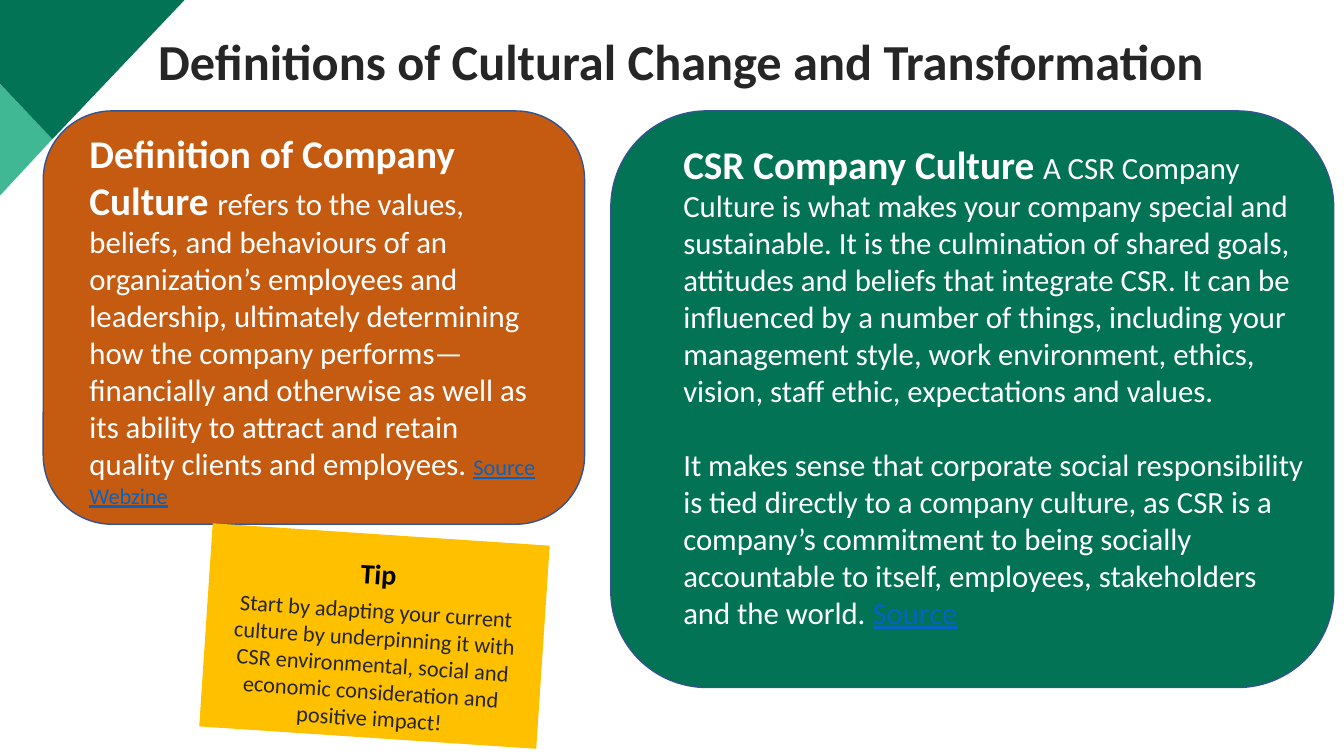
from pptx import Presentation
from pptx import util as u
from pptx.dml.color import RGBColor
from pptx.enum import shapes, text

GREEN, MINT, ORANGE, YELLOW = "027354", "40B894", "C55A11", "FFC000"
WHITE, BLACK, INK, LINK, OUTLINE = "FFFFFF", "000000", "262626", "0563C1", "325491"

HEADING = {"size": u.Pt(28), "bold": True, "color": WHITE}
BODY = {"size": u.Pt(22), "color": WHITE}
SOURCE = {"size": u.Pt(22), "underline": True, "color": LINK}
SMALL_SOURCE = {**SOURCE, "size": u.Pt(16)}


def color(value):
    return RGBColor.from_string(value)


class SlideBuilder:
    font = "Calibri"
    columns = 100
    rows = 100

    def __init__(self, presentation):
        self.column = presentation.slide_width / self.columns
        self.row = presentation.slide_height / self.rows
        self.slide = presentation.slides.add_slide(presentation.slide_layouts[6])

    def point(self, column, row):
        return round(column * self.column), round(row * self.row)

    def box(self, left, top, width, height):
        return *self.point(left, top), *self.point(width, height)

    def paint(self, shape, fill, outline=None):
        shape.shadow.inherit = False
        shape.fill.solid()
        shape.fill.fore_color.rgb = color(fill)
        if outline:
            shape.line.color.rgb = color(outline)
            shape.line.width = u.Pt(1)
        else:
            shape.line.fill.background()
        return shape

    def polygon(self, corners, fill):
        start, *others = [self.point(*corner) for corner in corners]
        builder = self.slide.shapes.build_freeform(*start)
        builder.add_line_segments(others, close=True)
        return self.paint(builder.convert_to_shape(), fill)

    def panel(self, kind, place, fill, outline=None):
        shape = self.slide.shapes.add_shape(kind, *self.box(*place))
        return self.paint(shape, fill, outline)

    def text_box(self, place, paragraphs):
        shape = self.slide.shapes.add_textbox(*self.box(*place))
        self.fill_text(shape.text_frame, paragraphs)

    def fill_text(self, frame, paragraphs):
        frame.word_wrap = True
        frame.vertical_anchor = text.MSO_ANCHOR.TOP
        for index, (layout, runs) in enumerate(paragraphs):
            paragraph = frame.add_paragraph() if index else frame.paragraphs[0]
            for name, value in layout.items():
                setattr(paragraph, name, value)
            for words, style in runs:
                run = paragraph.add_run()
                run.text = words
                for name, value in {"name": self.font, "bold": False, **style}.items():
                    if name == "color":
                        run.font.color.rgb = color(value)
                    else:
                        setattr(run.font, name, value)


def main():
    presentation = Presentation()
    presentation.slide_width = u.Inches(13.33)
    presentation.slide_height = u.Inches(7.5)
    builder = SlideBuilder(presentation)

    edge, fold = (0, 11.07), (3.9, 18.4)
    builder.polygon([edge, fold, (0, 25.87)], MINT)
    builder.polygon([(0, 0), (13.73, 0), fold, edge], GREEN)

    rounded = shapes.MSO_SHAPE.ROUNDED_RECTANGLE
    builder.panel(rounded, (3.22, 14.67, 40.28, 54.67), ORANGE, OUTLINE)
    builder.text_box((11.03, 4.27, 86.92, 13.87), [
        ({"line_spacing": 0.9}, [
            ("Definitions of Cultural Change and Transformation",
             {"size": u.Pt(36), "bold": True, "color": INK}),
        ]),
    ])
    builder.text_box((5.92, 16.4, 34.95, 47.6), [
        ({}, [
            ("Definition of Company Culture ", HEADING),
            ("refers to the values, beliefs, and behaviours of an organization’s "
             "employees and leadership, ultimately determining how the company "
             "performs—financially and otherwise as well as its ability to attract "
             "and retain quality clients and employees. ", BODY),
            ("Source Webzine", SMALL_SOURCE),
        ]),
    ])

    builder.panel(rounded, (45.45, 14.67, 53.78, 76.27), GREEN, OUTLINE)
    builder.text_box((50.1, 17.87, 48.08, 66.67), [
        ({}, [
            ("CSR Company Culture ", HEADING),
            ("A CSR Company Culture is what makes your company special and "
             "sustainable. It is the culmination of shared goals, attitudes and "
             "beliefs that integrate CSR. It can be influenced by a number of things, "
             "including your management style, work environment, ethics, vision, "
             "staff ethic, expectations and values.", BODY),
        ]),
        ({"space_before": u.Pt(26.5)}, [
            ("It makes sense that corporate social responsibility is tied directly "
             "to a company culture, as CSR is a company’s commitment to being "
             "socially accountable to itself, employees, stakeholders and the "
             "world. ", BODY),
            ("Source", SOURCE),
        ]),
    ])

    tip = builder.panel(shapes.MSO_SHAPE.RECTANGLE, (15.3, 70.67, 25.13, 26.93), YELLOW)
    tip.rotation = 3.8
    tip.text_frame.margin_top = round(2.9 * builder.row)
    centred = {"alignment": text.PP_ALIGN.CENTER}
    builder.fill_text(tip.text_frame, [
        (centred, [("Tip", {"size": u.Pt(20), "bold": True, "color": BLACK})]),
        ({**centred, "space_before": u.Pt(5)}, [
            ("Start by adapting your current culture by underpinning it with CSR "
             "environmental, social and economic consideration and positive impact!",
             {"size": u.Pt(16), "color": INK}),
        ]),
    ])

    presentation.save("out.pptx")


if __name__ == "__main__":
    main()
